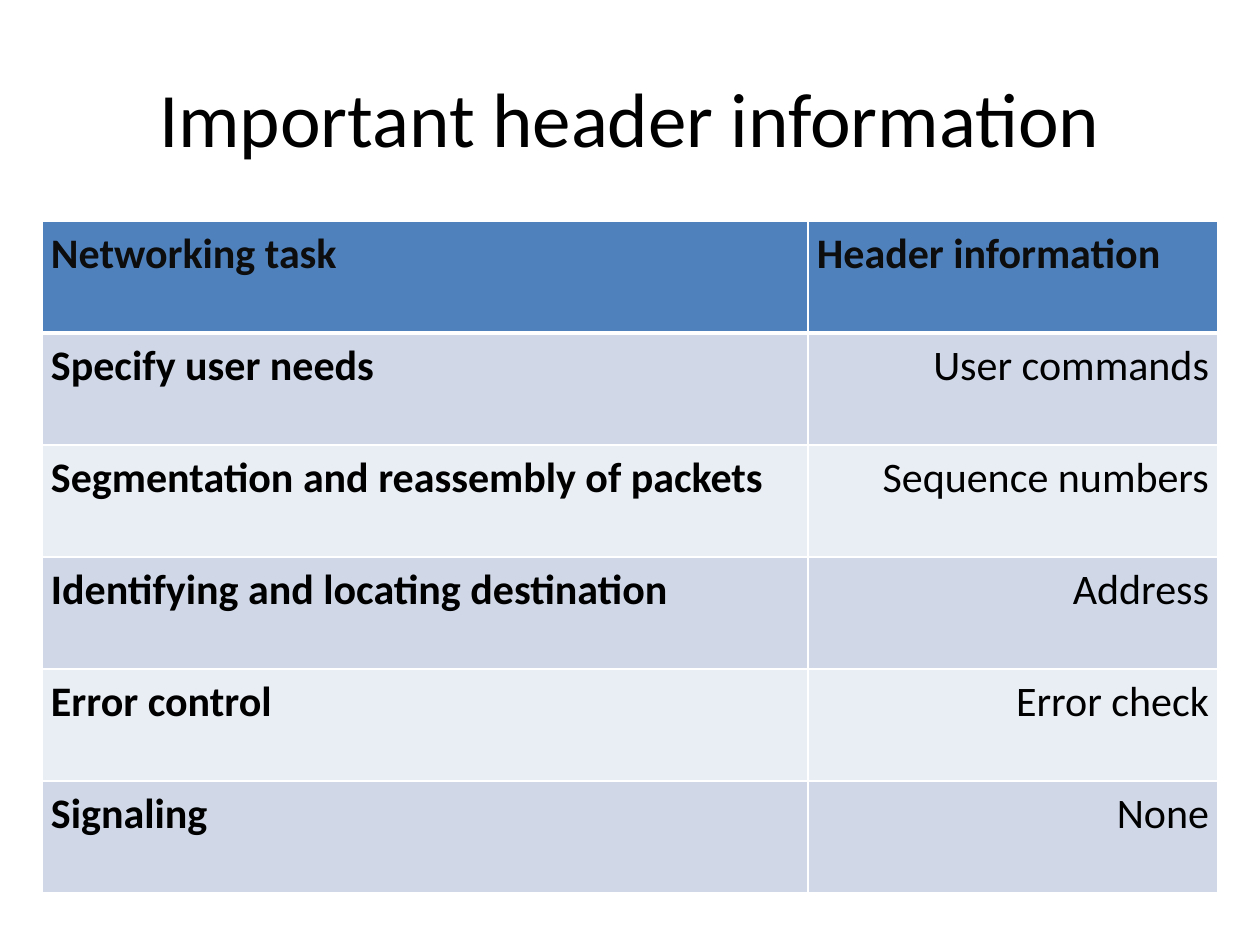
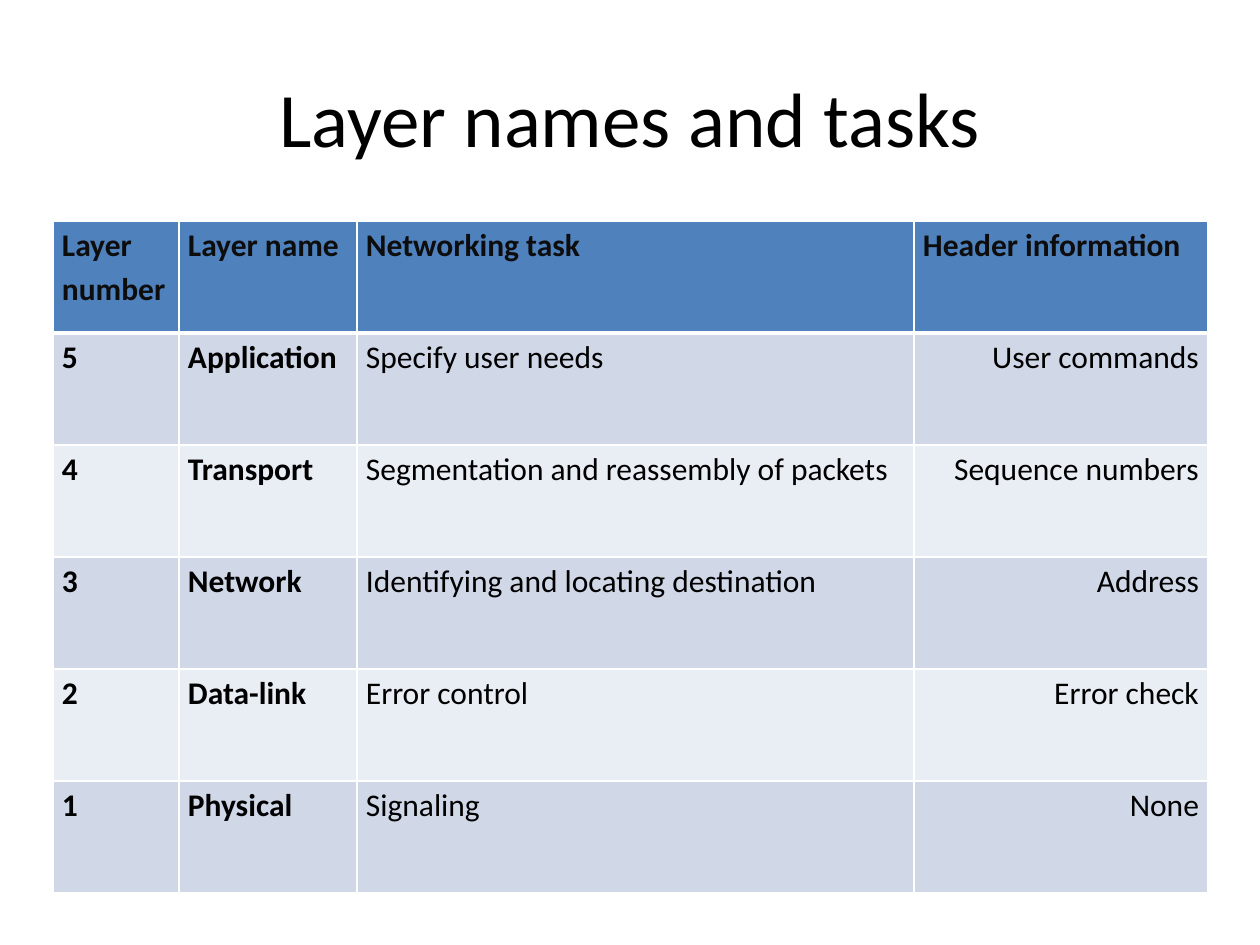
from dataclasses import dataclass

from lxml.etree import SubElement
from pptx import Presentation
from pptx.dml.color import RGBColor
from pptx.enum.text import MSO_ANCHOR, PP_ALIGN
from pptx.oxml.ns import qn
from pptx.slide import Slide
from pptx.table import _Cell
from pptx.text.text import _Paragraph
from pptx.util import Emu, Pt

SCALE = 914400 / 126
FONT = "Calibri"
BLACK = RGBColor(0x00, 0x00, 0x00)
INK = RGBColor(0x0D, 0x0D, 0x0D)
WHITE = RGBColor(0xFF, 0xFF, 0xFF)
BLUE = RGBColor(0x4F, 0x81, 0xBD)
BANDS = (RGBColor(0xE9, 0xED, 0xF4), RGBColor(0xD0, 0xD8, 0xE8))
TOP, ROW, INSET = 221, 112, 9

TASKS = (
    ("Networking task", "Header information"),
    ("Specify user needs", "User commands"),
    ("Segmentation and reassembly of packets", "Sequence numbers"),
    ("Identifying and locating destination", "Address"),
    ("Error control", "Error check"),
    ("Signaling", "None"),
)
LAYERS = (
    ("Layer number", "Layer name"),
    ("5", "Application"),
    ("4", "Transport"),
    ("3", "Network"),
    ("2", "Data-link"),
    ("1", "Physical"),
)


@dataclass(frozen=True)
class Page:
    """A titled slide with one table whose first columns are bold."""

    title: str
    left: int
    widths: tuple[int, ...]
    size: int
    bold: int
    rows: tuple[tuple[str, ...], ...]


PAGES = (
    Page("Important header information", 42, (766, 410), 24, 1, TASKS),
    Page("Layer names and tasks", 53, (126, 178, 557, 294), 18, 2,
         tuple(layer + task for layer, task in zip(LAYERS, TASKS))),
)


def px(count: int) -> Emu:
    """Turn pixels into EMU."""
    return Emu(round(count * SCALE))


def style(para: _Paragraph, size: int, color: RGBColor, bold: bool, align: PP_ALIGN) -> None:
    """Set the font and alignment of a paragraph."""
    para.alignment = align
    font = para.font
    font.name, font.size, font.bold = FONT, Pt(size), bold
    font.color.rgb = color


def add_title(slide: Slide, text: str) -> None:
    """Add the centred slide title."""
    frame = slide.shapes.add_textbox(px(63), px(38), px(1134), px(157)).text_frame
    frame.word_wrap = True
    frame.vertical_anchor = MSO_ANCHOR.MIDDLE
    frame.text = text
    style(frame.paragraphs[0], 44, BLACK, False, PP_ALIGN.CENTER)


def add_edges(cell: _Cell, row: int) -> None:
    """Draw white cell borders, thick below the header row."""
    props = cell._tc.get_or_add_tcPr()
    edges = {"L": 1, "R": 1, "T": 3 if row == 1 else 1, "B": 3 if row == 0 else 1}
    for side, width in edges.items():
        line = SubElement(props, qn(f"a:ln{side}"), w=str(Pt(width)))
        fill = SubElement(line, qn("a:solidFill"))
        SubElement(fill, qn("a:srgbClr"), val=str(WHITE))


def fill_cell(cell: _Cell, page: Page, row: int, col: int) -> None:
    """Write and format one table cell."""
    head = row == 0
    last = col == len(page.widths) - 1
    cell.text = page.rows[row][col]
    cell.margin_left = cell.margin_right = px(INSET)
    cell.margin_top = cell.margin_bottom = 0
    add_edges(cell, row)
    cell.fill.solid()
    cell.fill.fore_color.rgb = BLUE if head else BANDS[row % 2]
    para = cell.text_frame.paragraphs[0]
    para.line_spacing = 1.15
    style(para, page.size, INK if head else BLACK, head or col < page.bold,
          PP_ALIGN.RIGHT if last and not head else PP_ALIGN.JUSTIFY)


def add_grid(slide: Slide, page: Page) -> None:
    """Add the table of a page."""
    count = len(page.rows)
    grid = slide.shapes.add_table(
        count, len(page.widths), px(page.left), px(TOP), px(sum(page.widths)), px(ROW * count)
    ).table
    for col, width in enumerate(page.widths):
        grid.columns[col].width = px(width)
        for row in range(count):
            fill_cell(grid.cell(row, col), page, row, col)


def main() -> None:
    """Build the deck."""
    deck = Presentation()
    deck.slide_width, deck.slide_height = px(1260), px(945)
    for page in PAGES:
        slide = deck.slides.add_slide(deck.slide_layouts[6])
        add_title(slide, page.title)
        add_grid(slide, page)
    deck.save("out.pptx")


if __name__ == "__main__":
    main()
